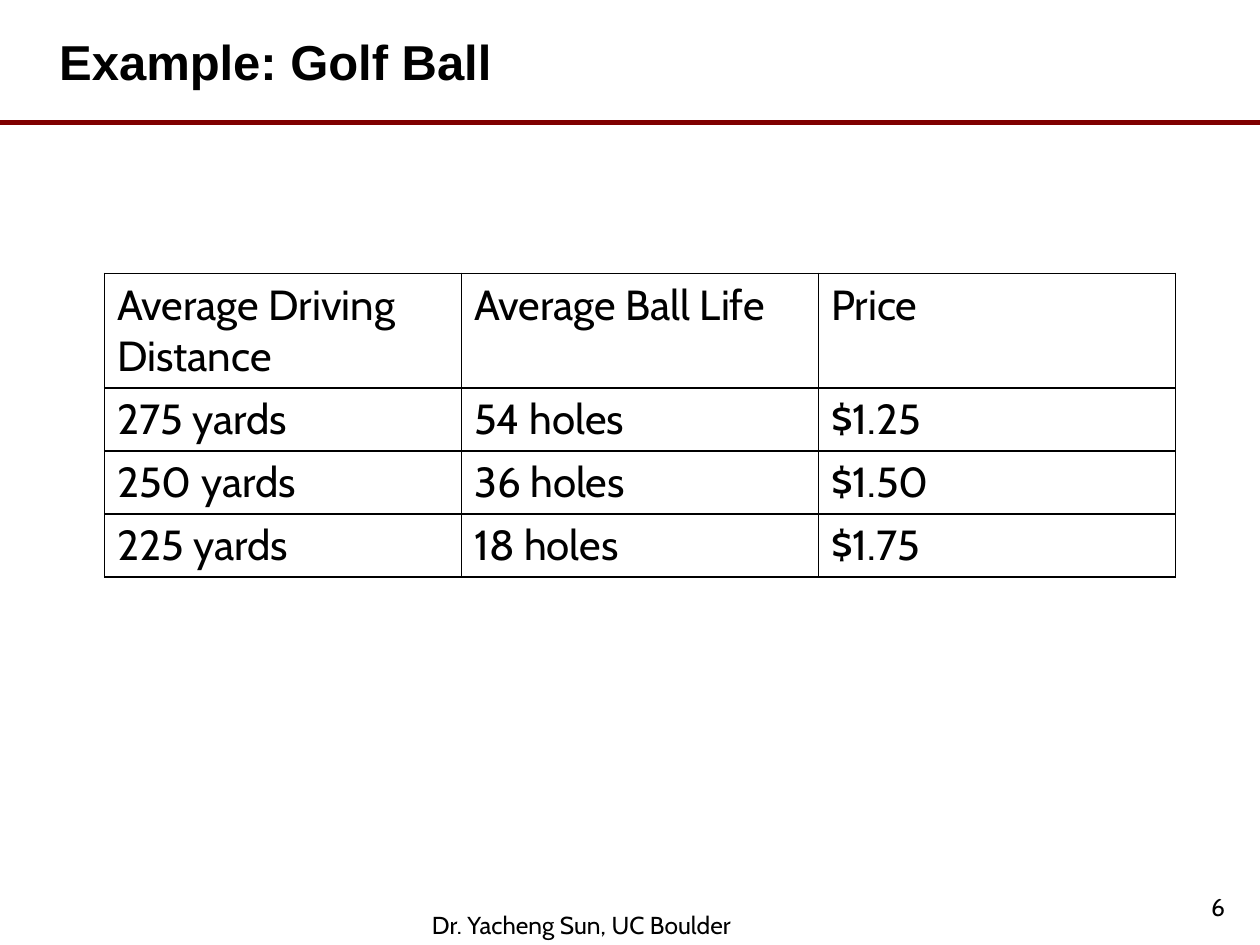
from lxml import etree
from pptx import Presentation
from pptx.dml.color import RGBColor
from pptx.enum.shapes import MSO_CONNECTOR
from pptx.enum.text import MSO_ANCHOR, PP_ALIGN
from pptx.oxml.ns import qn
from pptx.util import Inches, Pt

STRAIGHT = MSO_CONNECTOR.STRAIGHT
TOP, MIDDLE, BOTTOM = MSO_ANCHOR.TOP, MSO_ANCHOR.MIDDLE, MSO_ANCHOR.BOTTOM
LEFT, RIGHT = PP_ALIGN.LEFT, PP_ALIGN.RIGHT

COLORS = {"text": "000000", "rule": "800000", "border": "000000"}

TITLE = "Example: Golf Ball"
FOOTER = "Dr. Yacheng Sun, UC Boulder"
PAGE = "6"
ROWS = [
    ("Average Driving Distance", "Average Ball Life", "Price"),
    ("275 yards", "54 holes", "$1.25"),
    ("250 yards", "36 holes", "$1.50"),
    ("225 yards", "18 holes", "$1.75"),
]
TABLE_LEFT, TABLE_TOP, TABLE_WIDTH = 0.83, 2.17, 8.5
HEADER_HEIGHT, ROW_HEIGHT = 0.91, 0.5


def write(tf, text, size=14, font="Cabin", bold=False, align=LEFT):
    p = tf.paragraphs[0]
    p.alignment = align
    r = p.add_run()
    r.text = text
    r.font.size = Pt(size)
    r.font.name = font
    r.font.bold = bold
    r.font.color.rgb = RGBColor.from_string(COLORS["text"])


def add_text(slide, box, text, anchor=TOP, inset=(0.1, 0.05), **fmt):
    tf = slide.shapes.add_textbox(*map(Inches, box)).text_frame
    tf.word_wrap = True
    tf.vertical_anchor = anchor
    tf.margin_left = tf.margin_right = Inches(inset[0])
    tf.margin_top = tf.margin_bottom = Inches(inset[1])
    write(tf, text, **fmt)


def add_borders(cell):
    tc_pr = cell._tc.get_or_add_tcPr()
    for i, side in enumerate(("lnL", "lnR", "lnT", "lnB")):
        ln = etree.Element(qn(f"a:{side}"), w=str(Pt(1)))
        fill = etree.SubElement(ln, qn("a:solidFill"))
        etree.SubElement(fill, qn("a:srgbClr"), val=COLORS["border"])
        tc_pr.insert(i, ln)


def add_data_table(slide):
    height = HEADER_HEIGHT + ROW_HEIGHT * (len(ROWS) - 1)
    frame = slide.shapes.add_table(
        len(ROWS), len(ROWS[0]),
        *map(Inches, (TABLE_LEFT, TABLE_TOP, TABLE_WIDTH, height)))
    table = frame.table
    table.first_row = table.horz_banding = False
    for i, values in enumerate(ROWS):
        table.rows[i].height = Inches(ROW_HEIGHT if i else HEADER_HEIGHT)
        for j, value in enumerate(values):
            cell = table.cell(i, j)
            cell.fill.background()
            write(cell.text_frame, value, size=24)
            add_borders(cell)


def main():
    prs = Presentation()
    prs.slide_width, prs.slide_height = Inches(10), Inches(7.5)
    slide = prs.slides.add_slide(prs.slide_layouts[6])

    rule = slide.shapes.add_connector(
        STRAIGHT, 0, Inches(0.97), prs.slide_width, Inches(0.97))
    rule.line.color.rgb = RGBColor.from_string(COLORS["rule"])
    rule.line.width = Pt(3)
    etree.SubElement(rule._element.spPr, qn("a:effectLst"))

    add_text(slide, (0.42, 0.05, 9.17, 0.86), TITLE, anchor=MIDDLE,
             inset=(0.05, 0), size=28, font="Arial", bold=True)
    add_data_table(slide)
    add_text(slide, (3.33, 7.17, 3.75, 0.33), FOOTER)
    add_text(slide, (7.74, 6.86, 2.08, 0.5), PAGE, anchor=BOTTOM, align=RIGHT)
    prs.save("out.pptx")


if __name__ == "__main__":
    main()
